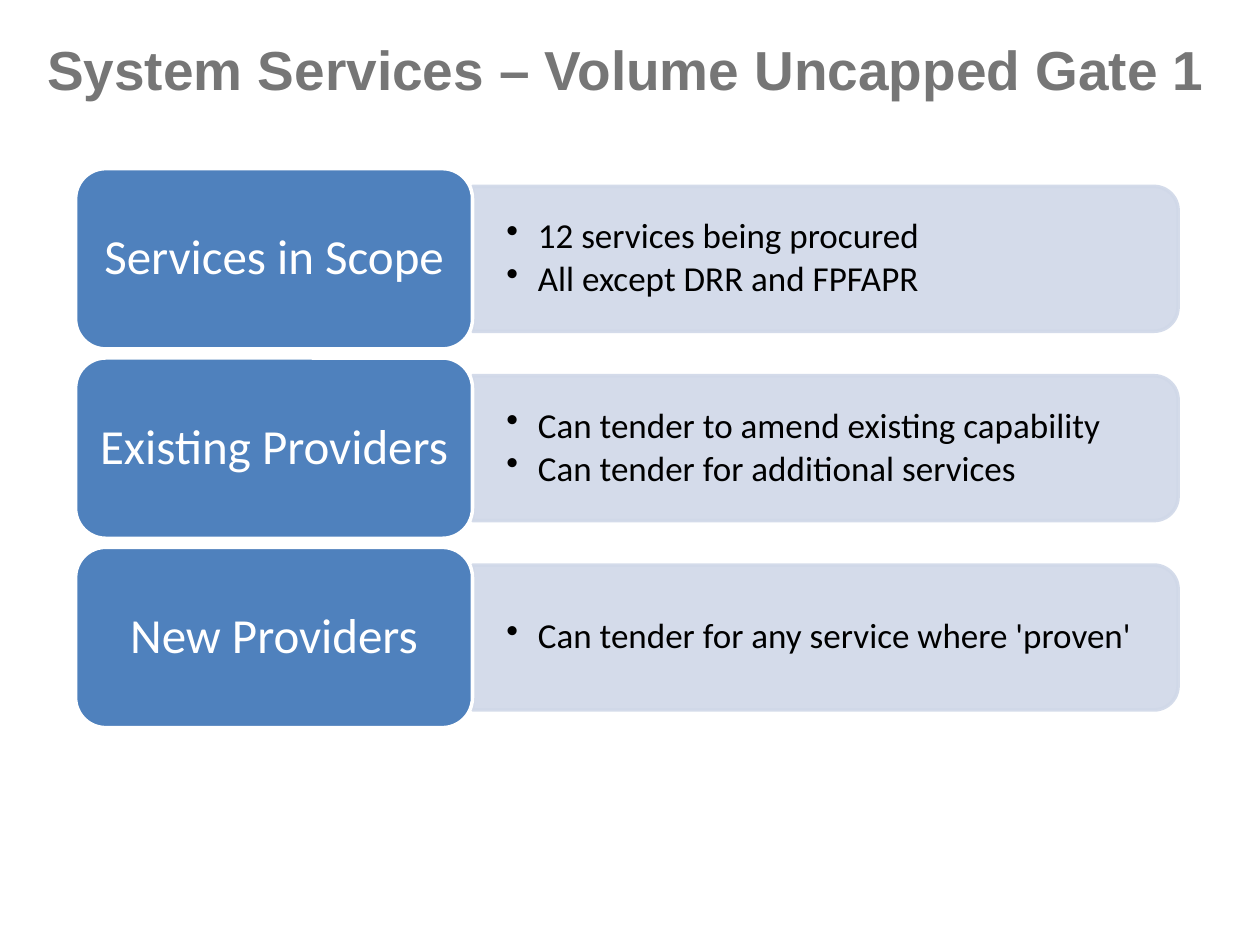
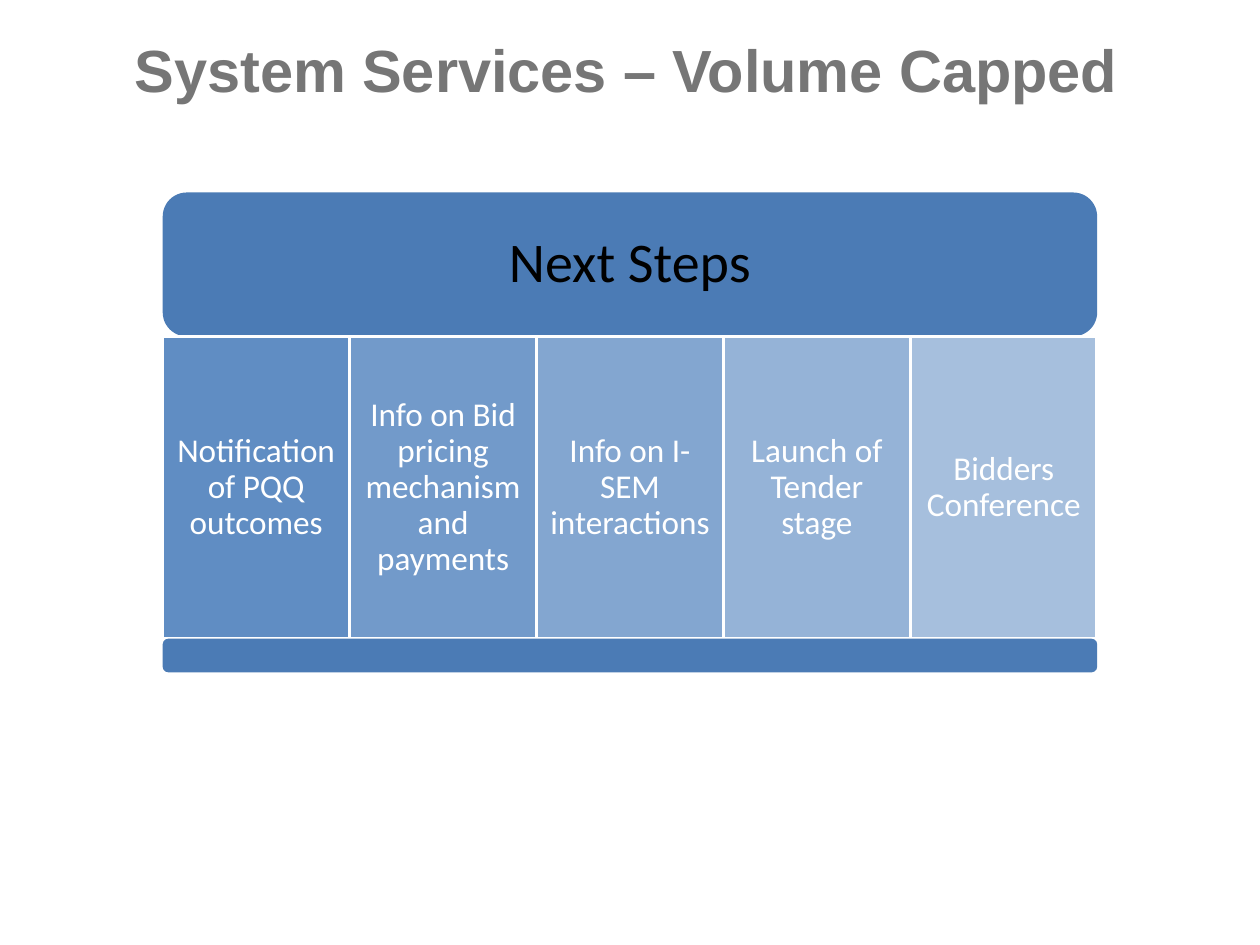
"""Build two slides on system services: scope and providers, then next steps."""
from lxml import etree
from pptx import Presentation
from pptx import util as u
from pptx.dml.color import RGBColor
from pptx.enum import shapes, text
from pptx.oxml.ns import qn

Pt = u.Pt


def rgb(value):
    return RGBColor.from_string(value)


def write(tf, lines, size, color, font="Calibri", bold=False, align="CENTER",
          spacing=0.9, gap=0, bullet=False, inset=(7.2, 3.6)):
    tf.word_wrap = True
    tf.auto_size = text.MSO_AUTO_SIZE.NONE
    tf.vertical_anchor = text.MSO_ANCHOR.MIDDLE
    tf.margin_left = tf.margin_right = Pt(inset[0])
    tf.margin_top = tf.margin_bottom = Pt(inset[1])
    for i, line in enumerate(lines):
        p = tf.add_paragraph() if i else tf.paragraphs[0]
        if bullet:
            pPr = p._p.get_or_add_pPr()
            pPr.set("marL", str(Pt(18)))
            pPr.set("indent", str(-Pt(18)))
            etree.SubElement(pPr, qn("a:buChar")).set("char", "•")
        p.alignment = getattr(text.PP_ALIGN, align)
        p.line_spacing = spacing
        p.space_before = Pt(gap if i else 0)
        r = p.add_run()
        r.text = line
        r.font.name, r.font.size, r.font.bold = font, Pt(size), bold
        r.font.color.rgb = rgb(color)


class Deck:
    GREY, BLUE, BAND, PALE = "767676", "4F81BD", "4B7BB5", "D0D8E8"
    WHITE, BLACK = "FFFFFF", "000000"

    def __init__(self):
        self.prs = Presentation()
        self.prs.slide_width, self.prs.slide_height = Pt(720), Pt(540)

    def slide(self, title, size):
        self.s = self.prs.slides.add_slide(self.prs.slide_layouts[5])
        sp = self.s.shapes.title
        sp.left, sp.top, sp.width, sp.height = Pt(13.7), Pt(5.8), Pt(688.3), Pt(67)
        write(sp.text_frame, [title], size, self.GREY, "Arial", True, spacing=1)

    def shape(self, kind, x, y, w, h, fill, line=None, opacity=100, line_opacity=100):
        sp = self.s.shapes.add_shape(getattr(shapes.MSO_SHAPE, kind),
                                     Pt(x), Pt(y), Pt(w), Pt(h))
        sp.shadow.inherit = False
        self.paint(sp.fill, fill, opacity)
        if line:
            self.paint(sp.line.fill, line, line_opacity)
            sp.line.width = Pt(2)
        else:
            sp.line.fill.background()
        return sp

    def paint(self, fill, color, opacity):
        fill.solid()
        fill.fore_color.rgb = rgb(color)
        if opacity < 100:
            clr = fill._xPr.find(qn("a:solidFill"))[0]
            etree.SubElement(clr, qn("a:alpha")).set("val", str(opacity * 1000))

    def panel(self, x, y, w, h, lines):
        sp = self.shape("ROUND_2_SAME_RECTANGLE", x + (w - h) / 2, y + (h - w) / 2,
                        h, w, self.PALE, self.PALE, 90, 90)
        sp.rotation = 90
        tb = self.s.shapes.add_textbox(Pt(x), Pt(y + 4), Pt(w - 4), Pt(h - 8))
        write(tb.text_frame, lines, 20, self.BLACK, align="LEFT", gap=3,
              bullet=True, inset=(19.4, 9.7))

    def card(self, x, y, w, h, label):
        sp = self.shape("ROUNDED_RECTANGLE", x, y, w, h, self.BLUE, self.WHITE)
        write(sp.text_frame, [label], 28, self.WHITE, inset=(8.4, 4.2))

    def column(self, x, y, w, h, label, opacity):
        sp = self.shape("RECTANGLE", x, y, w, h, self.BLUE, self.WHITE, opacity)
        write(sp.text_frame, [label], 19, self.WHITE, inset=(5.7, 5.7))

    def band(self, x, y, w, h, label=None):
        sp = self.shape("ROUNDED_RECTANGLE", x, y, w, h, self.BAND)
        if label:
            write(sp.text_frame, [label], 32, self.BLACK, inset=(9.6, 9.6))


def main():
    deck = Deck()

    deck.slide("System Services – Volume Uncapped Gate 1", 31.4)
    rows = [
        ("Services in Scope", ["12 services being procured",
                               "All except DRR and FPFAPR"]),
        ("Existing Providers", ["Can tender to amend existing capability",
                                "Can tender for additional services"]),
        ("New Providers", ["Can tender for any service where 'proven'"]),
    ]
    left, card_w, card_h, panel_h = 43.2, 226.8, 103, 82.8
    for i, (label, lines) in enumerate(rows):
        y = 96.4 + i * 108.2
        deck.panel(left + card_w, y + (card_h - panel_h) / 2, 403.2, panel_h, lines)
        deck.card(left, y, card_w, card_h, label)

    deck.slide("System Services – Volume Capped", 34)
    steps = ["Notification of PQQ outcomes",
             "Info on Bid pricing mechanism and payments",
             "Info on I-SEM interactions",
             "Launch of Tender stage",
             "Bidders Conference"]
    left, top, width, head_h, step_h = 93, 110, 534, 82.2, 172.8
    step_w = width / len(steps)
    deck.band(left, top, width, head_h, "Next Steps")
    for i, step in enumerate(steps):
        deck.column(left + i * step_w, top + head_h, step_w, step_h, step, 90 - 10 * i)
    deck.band(left, top + head_h + step_h, width, 19.2)

    deck.prs.save("out.pptx")


if __name__ == "__main__":
    main()
